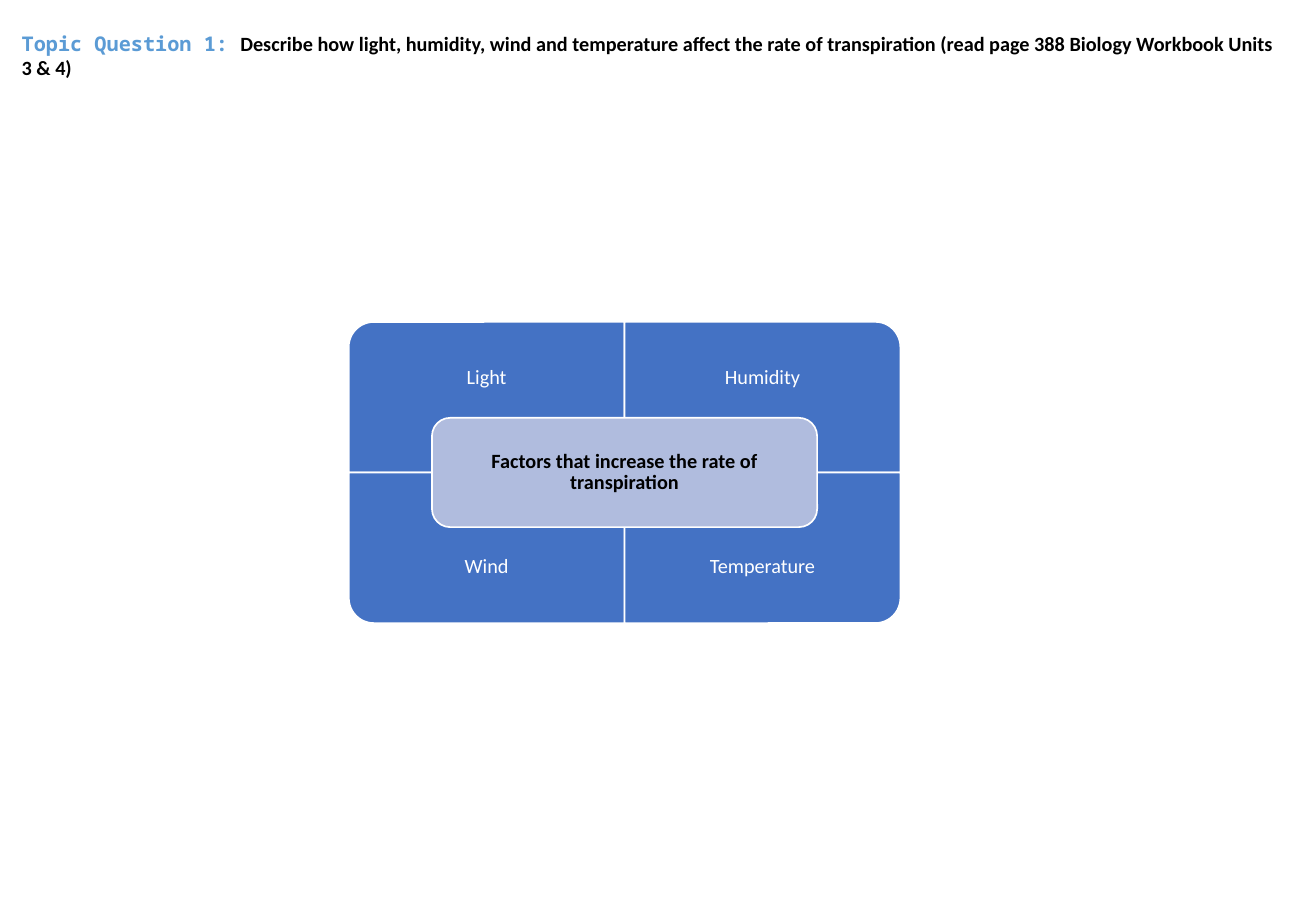
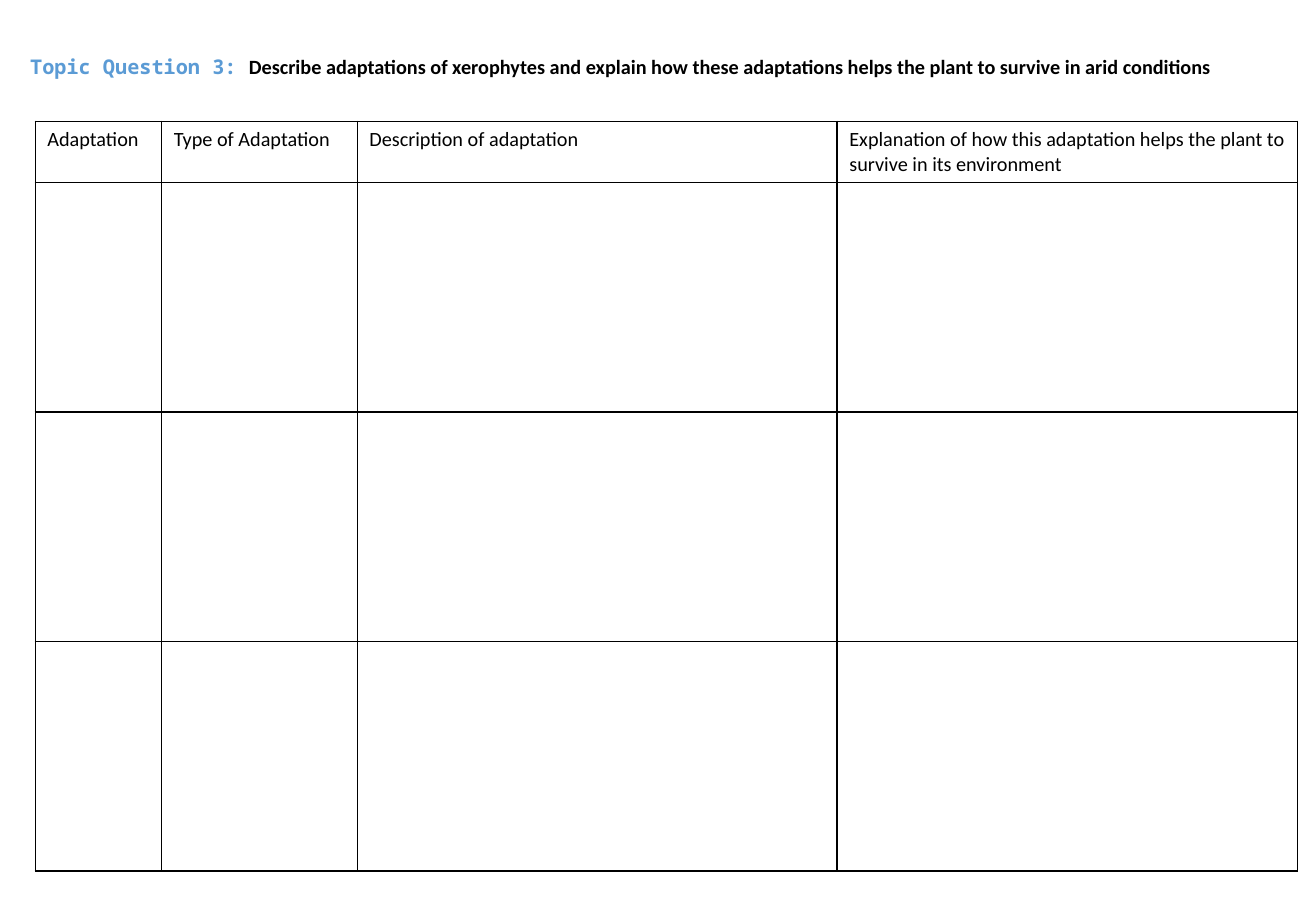
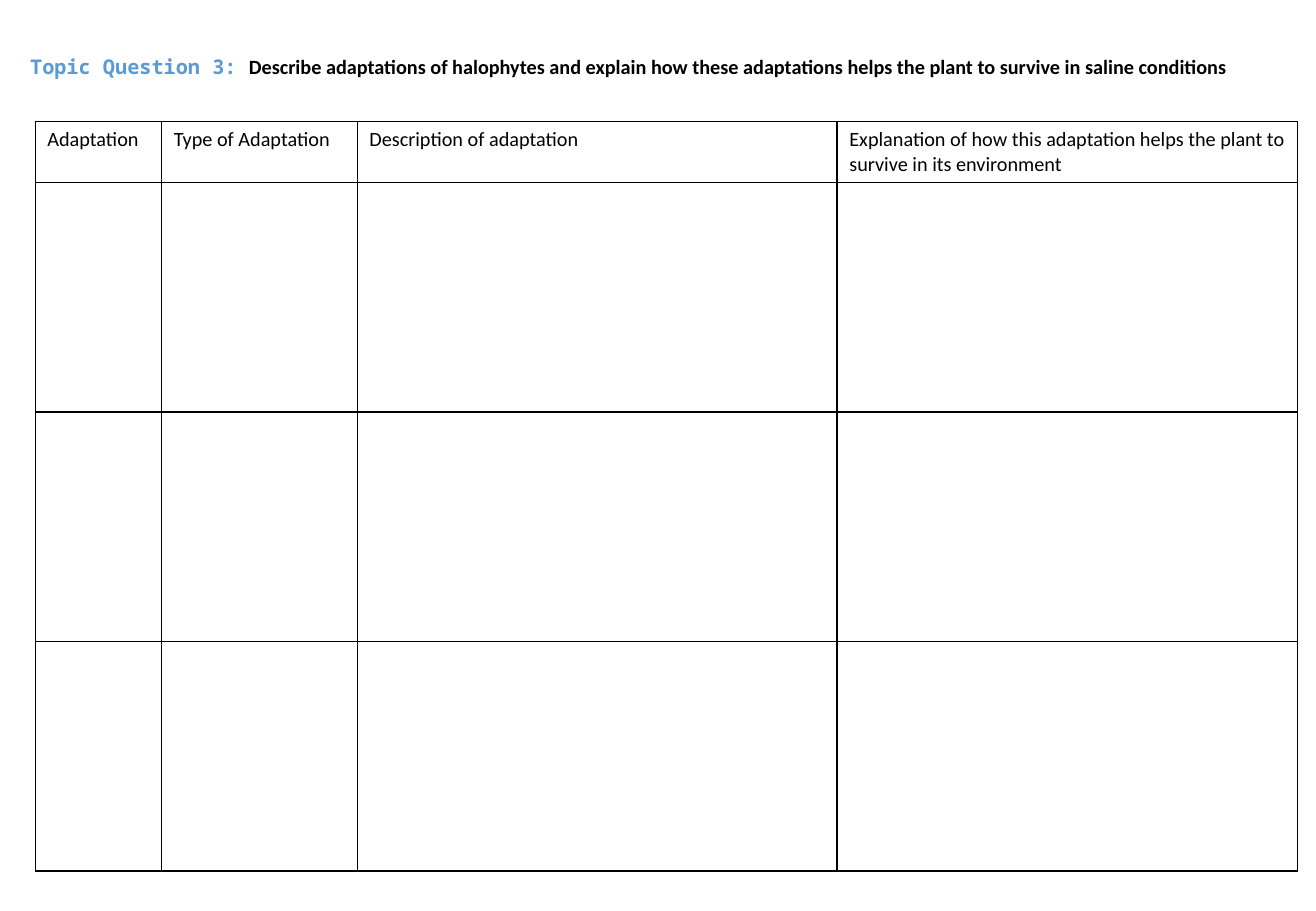
from pptx import Presentation
from pptx.dml.color import RGBColor
from pptx.enum.shapes import MSO_SHAPE
from pptx.enum.text import MSO_ANCHOR, PP_ALIGN
from pptx.oxml import parse_xml
from pptx.oxml.ns import nsdecls
from pptx.util import Emu, Pt

EMU_PER_PX = 9144
SLIDE_WIDTH, SLIDE_HEIGHT = 1083, 750

WHITE = RGBColor(0xFF, 0xFF, 0xFF)
BLACK = RGBColor(0x00, 0x00, 0x00)
LABEL_BLUE = RGBColor(0x5B, 0x9B, 0xD5)
QUADRANT_BLUE = RGBColor(0x44, 0x72, 0xC4)
CENTRE_BLUE = RGBColor(0xB0, 0xBC, 0xDE)

BODY_FONT = "Calibri"
LABEL_FONT = "Noto Sans Mono"
TEXT_SIZE = Pt(12)

ROUND_ONE = MSO_SHAPE.ROUND_1_RECTANGLE
ROUNDED = MSO_SHAPE.ROUNDED_RECTANGLE
MIDDLE = MSO_ANCHOR.MIDDLE
CENTER = PP_ALIGN.CENTER

QUESTION_WIDTH, QUESTION_HEIGHT = 1053, 75

MATRIX_LEFT, MATRIX_TOP = 287, 265
QUADRANT_WIDTH, QUADRANT_HEIGHT = 227, 124
FACTOR_HEIGHT = 93
CENTRE_WIDTH, CENTRE_HEIGHT = 317, 90
FACTORS = [("Light", 0, 0, 270), ("Humidity", 1, 0, 0),
           ("Wind", 0, 1, 180), ("Temperature", 1, 1, 90)]

TABLE_LEFT, TABLE_TOP = 29, 100
COLUMN_WIDTHS = [104, 161, 395, 379]
ROW_HEIGHTS = [50] + [189] * 3
HEADINGS = ["Adaptation", "Type of Adaptation", "Description of adaptation",
            "Explanation of how this adaptation helps the plant to survive in its environment"]


def px(length):
    return Emu(round(length * EMU_PER_PX))


def box(left, top, width, height):
    return px(left), px(top), px(width), px(height)


def style_run(run, color, bold=False, font=BODY_FONT):
    run.font.name = font
    run.font.size = TEXT_SIZE
    run.font.bold = bold
    run.font.color.rgb = color


def add_question(slide, left, top, label, question):
    frame = slide.shapes.add_textbox(*box(left, top, QUESTION_WIDTH, QUESTION_HEIGHT)).text_frame
    frame.word_wrap = True
    frame.vertical_anchor = MIDDLE
    paragraph = frame.paragraphs[0]
    for text, color, font in ((label, LABEL_BLUE, LABEL_FONT), (question, BLACK, BODY_FONT)):
        run = paragraph.add_run()
        run.text = text
        style_run(run, color, True, font)


def add_panel(slide, preset, bounds, fill, rotation=0):
    panel = slide.shapes.add_shape(preset, *bounds)
    panel.rotation = rotation
    panel.shadow.inherit = False
    panel.fill.solid()
    panel.fill.fore_color.rgb = fill
    panel.line.color.rgb = WHITE
    panel.line.width = Pt(1)
    return panel


def set_centred_text(frame, text, color, bold=False):
    frame.text = text
    frame.word_wrap = True
    frame.vertical_anchor = MIDDLE
    frame.margin_left = frame.margin_right = px(9)
    frame.margin_top = frame.margin_bottom = px(9)
    paragraph = frame.paragraphs[0]
    paragraph.alignment = CENTER
    paragraph.line_spacing = 0.9
    style_run(paragraph.runs[0], color, bold)


def add_quadrant(slide, factor, column, row, rotation):
    left = MATRIX_LEFT + column * QUADRANT_WIDTH
    top = MATRIX_TOP + row * QUADRANT_HEIGHT
    width, height = QUADRANT_WIDTH, QUADRANT_HEIGHT
    if rotation % 180:
        width, height = height, width
    panel_left = left + (QUADRANT_WIDTH - width) / 2
    panel_top = top + (QUADRANT_HEIGHT - height) / 2
    add_panel(slide, ROUND_ONE, box(panel_left, panel_top, width, height), QUADRANT_BLUE, rotation)

    factor_top = top + row * (QUADRANT_HEIGHT - FACTOR_HEIGHT)
    factor_label = slide.shapes.add_textbox(*box(left, factor_top, QUADRANT_WIDTH, FACTOR_HEIGHT))
    set_centred_text(factor_label.text_frame, factor, WHITE)


def add_factor_matrix(slide, title):
    for factor in FACTORS:
        add_quadrant(slide, *factor)
    centre_left = MATRIX_LEFT + QUADRANT_WIDTH - CENTRE_WIDTH / 2
    centre_top = MATRIX_TOP + QUADRANT_HEIGHT - CENTRE_HEIGHT / 2
    centre = add_panel(slide, ROUNDED, box(centre_left, centre_top, CENTRE_WIDTH, CENTRE_HEIGHT),
                       CENTRE_BLUE)
    set_centred_text(centre.text_frame, title, BLACK, True)


def set_cell_borders(cell):
    properties = cell._tc.get_or_add_tcPr()
    for position, side in enumerate(("lnL", "lnR", "lnT", "lnB")):
        properties.insert(position, parse_xml(
            f'<a:{side} {nsdecls("a")} w="{Pt(1)}"><a:solidFill>'
            f'<a:srgbClr val="{BLACK}"/></a:solidFill></a:{side}>'))


def add_adaptation_table(slide):
    bounds = box(TABLE_LEFT, TABLE_TOP, sum(COLUMN_WIDTHS), sum(ROW_HEIGHTS))
    table = slide.shapes.add_table(len(ROW_HEIGHTS), len(COLUMN_WIDTHS), *bounds).table
    table.first_row = False
    table.horz_banding = False
    for column, width in zip(table.columns, COLUMN_WIDTHS):
        column.width = px(width)
    for row, height in zip(table.rows, ROW_HEIGHTS):
        row.height = px(height)
    for cell in table.iter_cells():
        cell.fill.background()
        set_cell_borders(cell)
    for cell, heading in zip(table.rows[0].cells, HEADINGS):
        cell.text_frame.text = heading
        style_run(cell.text_frame.paragraphs[0].runs[0], BLACK)


def main():
    presentation = Presentation()
    presentation.slide_width = px(SLIDE_WIDTH)
    presentation.slide_height = px(SLIDE_HEIGHT)
    blank = presentation.slide_layouts[6]

    transpiration = presentation.slides.add_slide(blank)
    add_question(transpiration, 8, 8, "Topic Question 1: ",
                 "Describe how light, humidity, wind and temperature affect the rate of "
                 "transpiration (read page 388 Biology Workbook Units 3 & 4)")
    add_factor_matrix(transpiration, "Factors that increase the rate of transpiration")

    for plants, conditions in (("xerophytes", "arid"), ("halophytes", "saline")):
        adaptations = presentation.slides.add_slide(blank)
        add_adaptation_table(adaptations)
        add_question(adaptations, 15, 17, "Topic Question 3: ",
                     f"Describe adaptations of {plants} and explain how these adaptations "
                     f"helps the plant to survive in {conditions} conditions")

    presentation.save("out.pptx")


if __name__ == "__main__":
    main()
